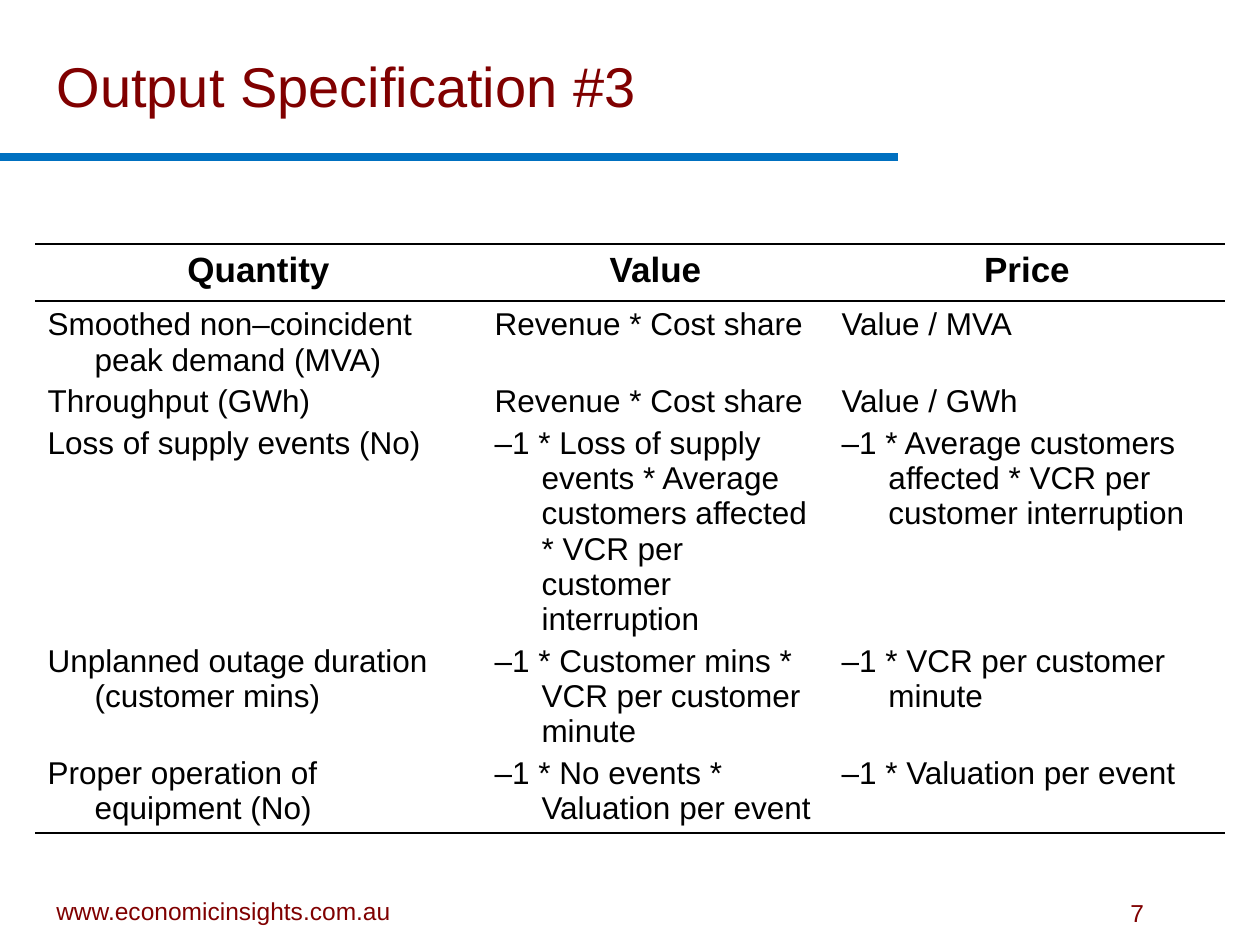
from pptx import Presentation
from pptx.dml.color import RGBColor
from pptx.enum.shapes import MSO_CONNECTOR as Connector
from pptx.enum.text import MSO_ANCHOR as Anchor, MSO_AUTO_SIZE as AutoSize, PP_ALIGN as Align
from pptx.oxml.ns import qn
from pptx.util import Emu, Pt
from lxml.etree import SubElement

SCALE = 914400 // 126
MAROON, BLUE, BLACK = "800000", "0070C0", "000000"
LINE_HEIGHT = 20.14  # points, one line of body text
HANGING = 47

COLUMN_WIDTHS = [447, 347, 396]
ROW_HEIGHTS = [57, 532]
HEADINGS = ["Quantity", "Value", "Price"]

# Each entry: text and the number of lines it takes, one row per output
OUTPUTS = [
    [("Smoothed non–coincident peak demand (MVA)", 2),
     ("Revenue * Cost share", 1),
     ("Value / MVA", 1)],
    [("Throughput (GWh)", 1),
     ("Revenue * Cost share", 1),
     ("Value / GWh", 1)],
    [("Loss of supply events (No)", 1),
     ("–1 * Loss of supply events * Average customers affected"
      " * VCR per customer interruption", 6),
     ("–1 * Average customers affected * VCR per customer interruption", 3)],
    [("Unplanned outage duration (customer mins)", 2),
     ("–1 * Customer mins * VCR per customer minute", 3),
     ("–1 * VCR per customer minute", 2)],
    [("Proper operation of equipment (No)", 2),
     ("–1 * No events * Valuation per event", 2),
     ("–1 * Valuation per event", 1)],
]


def px(length):
    return Emu(length * SCALE)


def color(code):
    return RGBColor.from_string(code)


def style(para, size, code, align=Align.LEFT, bold=False):
    para.alignment = align
    for span in para.runs:
        font = span.font
        font.name, font.size, font.bold = "Arial", Pt(size), bold
        font.color.rgb = color(code)


def fill_box(box, text, size, code, anchor, align=Align.LEFT, wrap=True):
    frame = box.text_frame
    frame.text = text
    frame.word_wrap = wrap
    frame.auto_size = AutoSize.NONE
    frame.vertical_anchor = anchor
    style(frame.paragraphs[0], size, code, align)


def add_title(page, text):
    title = page.shapes.title
    title.left, title.top, title.width, title.height = map(px, (44, 45, 853, 80))
    fill_box(title, text, 32, MAROON, Anchor.BOTTOM)


def add_label(page, place, text, anchor, align=Align.LEFT, wrap=True):
    box = page.shapes.add_textbox(*map(px, place))
    fill_box(box, text, 14, MAROON, anchor, align, wrap)


def add_rule(page, start, end, code, width):
    rule = page.shapes.add_connector(Connector.STRAIGHT, *map(px, start + end))
    rule.line.color.rgb = color(code)
    rule.line.width = Pt(width)
    SubElement(rule._element.spPr, qn("a:effectLst"))


def set_borders(cell, visible):
    properties = cell._tc.get_or_add_tcPr()
    for side in ("lnL", "lnR", "lnT", "lnB"):
        border = SubElement(properties, qn(f"a:{side}"), w=str(Pt(1.5)))
        if side in visible:
            fill = SubElement(border, qn("a:solidFill"))
            SubElement(fill, qn("a:srgbClr"), val=BLACK)
        else:
            SubElement(border, qn("a:noFill"))


def hang(para):
    properties = para._p.get_or_add_pPr()
    properties.set("marL", str(px(HANGING)))
    properties.set("indent", str(px(-HANGING)))


def fill_body(cell, column):
    cell.text = "\n".join(row[column][0] for row in OUTPUTS)
    for index, (para, row) in enumerate(zip(cell.text_frame.paragraphs, OUTPUTS)):
        hang(para)
        style(para, 18, BLACK)
        para.space_before = Pt(3.6 if index else 0)
        # Pad to the tallest entry so that the outputs line up
        missing = max(lines for _, lines in row) - row[column][1]
        para.space_after = Pt(missing * LINE_HEIGHT)


def add_output_table(page):
    place = (35, 244, sum(COLUMN_WIDTHS), sum(ROW_HEIGHTS))
    table = page.shapes.add_table(2, len(HEADINGS), *map(px, place)).table
    table.first_row = table.horz_banding = False
    for row, height in zip(table.rows, ROW_HEIGHTS):
        row.height = px(height)
    for index, (heading, width) in enumerate(zip(HEADINGS, COLUMN_WIDTHS)):
        table.columns[index].width = px(width)
        head, body = table.cell(0, index), table.cell(1, index)
        for cell in (head, body):
            set_borders(cell, ("lnT", "lnB"))
            cell.fill.background()
        head.text = heading
        para = head.text_frame.paragraphs[0]
        hang(para)
        style(para, 20, BLACK, Align.CENTER, bold=True)
        fill_body(body, index)


def main():
    deck = Presentation()
    deck.slide_width, deck.slide_height = px(1260), px(945)
    page = deck.slides.add_slide(deck.slide_layouts[5])

    # Heading and rule
    add_rule(page, (0, 157), (898, 157), BLUE, 5)
    add_title(page, "Output Specification #3")

    # Outputs
    add_output_table(page)

    # Footer
    add_label(page, (25, 889, 397, 43), "www.economicinsights.com.au",
              Anchor.BOTTOM, Align.CENTER)
    add_label(page, (1118, 892, 55, 42), "7", Anchor.TOP, wrap=False)

    deck.save("out.pptx")


if __name__ == "__main__":
    main()
